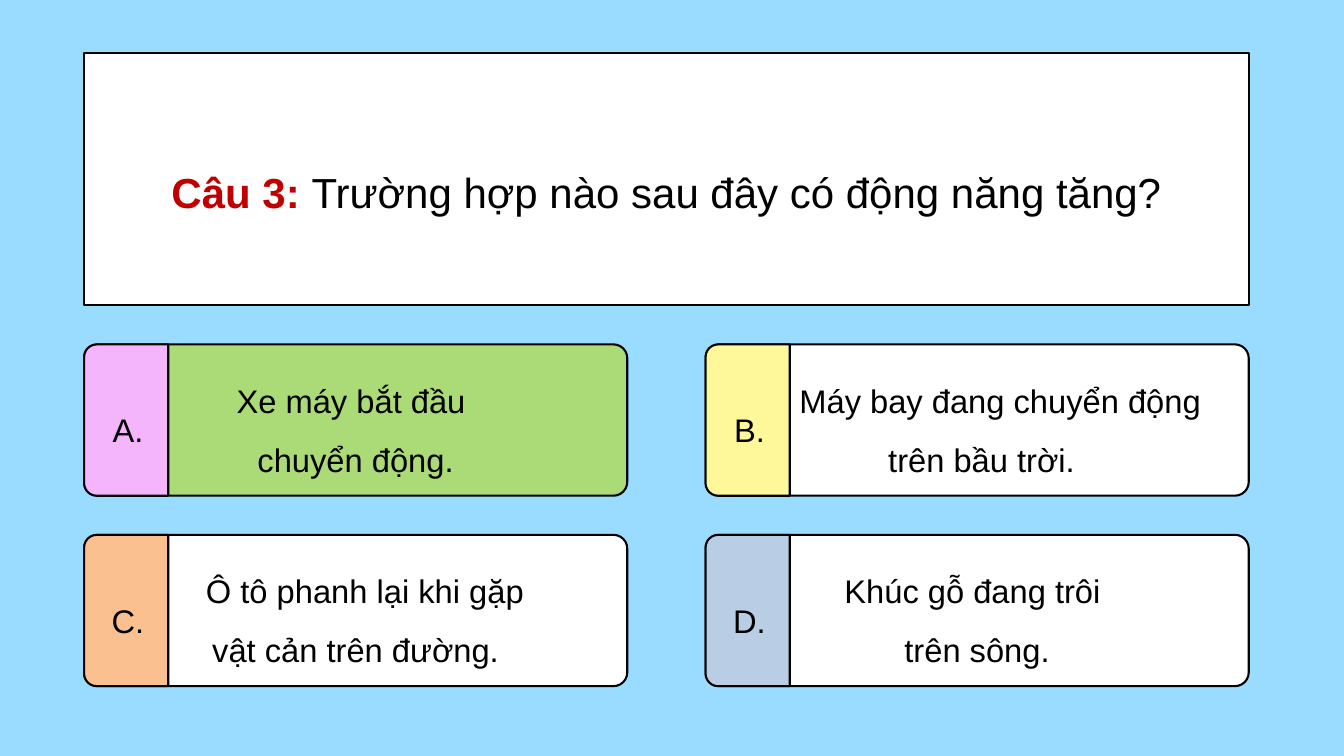
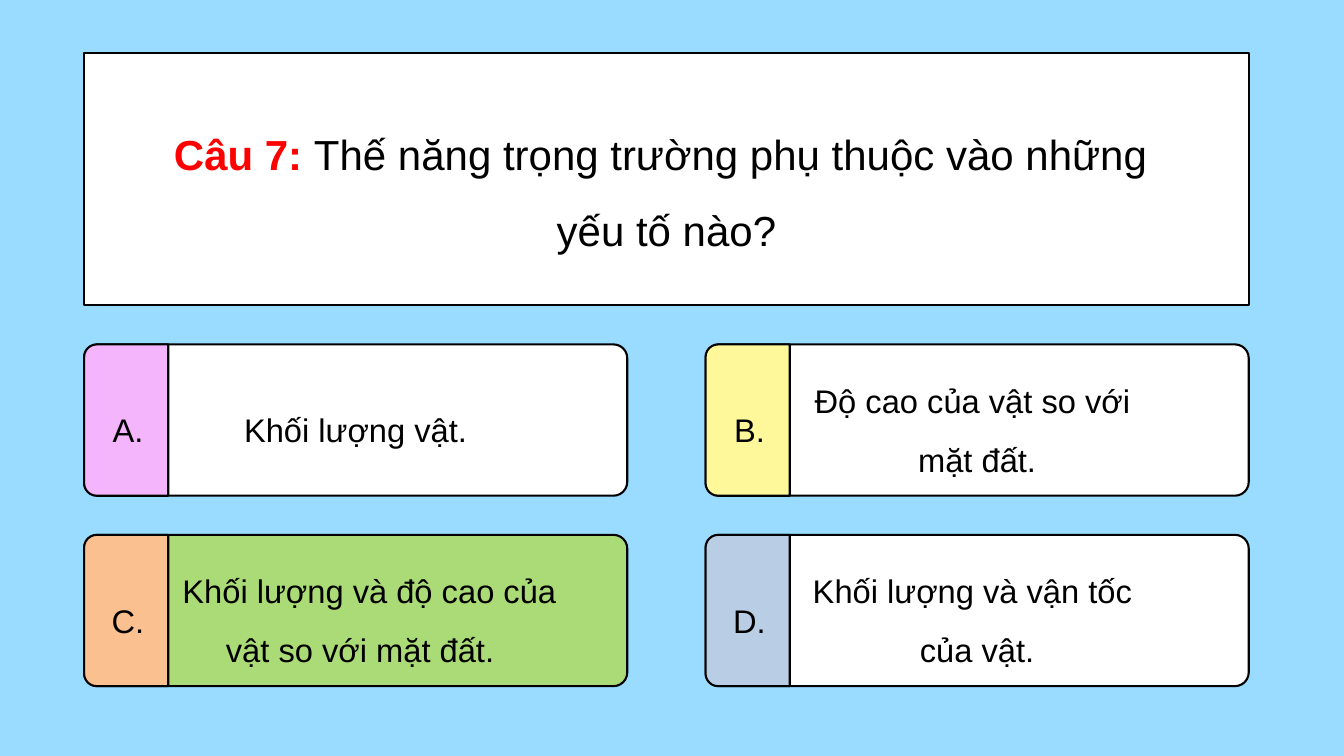
from pptx import Presentation
from pptx.dml.color import RGBColor
from pptx.enum.shapes import MSO_SHAPE
from pptx.enum.text import MSO_ANCHOR, MSO_AUTO_SIZE, PP_ALIGN
from pptx.oxml import parse_xml
from pptx.oxml.ns import nsdecls
from pptx.util import Cm, Pt

SKY = RGBColor(0x99, 0xDC, 0xFF)
WHITE = RGBColor(0xFF, 0xFF, 0xFF)
BLACK = RGBColor(0x00, 0x00, 0x00)
GREEN = RGBColor(0xAB, 0xDB, 0x77)
DARK_RED = RGBColor(0xC0, 0x00, 0x00)
RED = RGBColor(0xFF, 0x00, 0x00)
PINK = RGBColor(0xF5, 0xB5, 0xFC)
YELLOW = RGBColor(0xFF, 0xF8, 0x9B)
ORANGE = RGBColor(0xFA, 0xC0, 0x90)
BLUE = RGBColor(0xB9, 0xCD, 0xE5)

ROUNDED = MSO_SHAPE.ROUNDED_RECTANGLE
ROUNDED_TOP = MSO_SHAPE.ROUND_2_SAME_RECTANGLE
CENTER = PP_ALIGN.CENTER
MIDDLE = MSO_ANCHOR.MIDDLE
NO_AUTOFIT = MSO_AUTO_SIZE.NONE

TITLE_ONLY_LAYOUT = 5
LETTERS = "ABCD"
TAB_COLORS = (PINK, YELLOW, ORANGE, BLUE)

# Answer grid, in centimetres
LEFT, TOP = 3.18, 13.02
COLUMN_STEP, ROW_STEP = 23.49, 7.2
ANSWER_WIDTH, ANSWER_HEIGHT, TAB_WIDTH = 20.53, 5.72, 3.18

# Each answer line is a text, or a text with its left indent in centimetres
QUESTIONS = [
    {
        "label": "Câu 3: ",
        "label_color": DARK_RED,
        "lines": ["Trường hợp nào sau đây có động năng tăng?"],
        "answers": [
            ["Xe máy bắt đầu ", "chuyển động."],
            [("Máy bay đang chuyển động", 1.75), " trên bầu trời."],
            [("Ô tô phanh lại khi gặp ", 1.05), "vật cản trên đường."],
            ["Khúc gỗ đang trôi ", "trên sông."],
        ],
        "correct": "A",
    },
    {
        "label": "Câu 7: ",
        "label_color": RED,
        "lines": ["Thế năng trọng trường phụ thuộc vào những ", "yếu tố nào?"],
        "answers": [
            ["Khối lượng vật."],
            ["Độ cao của vật so với ", "mặt đất."],
            [("Khối lượng và độ cao của", 1.05), " vật so với mặt đất."],
            ["Khối lượng và vận tốc ", "của vật."],
        ],
        "correct": "C",
    },
]


class QuizDeck:
    font = "Arial"
    question_size = Pt(45)
    answer_size = Pt(35)
    outline = Pt(2.25)
    corner = 0.091
    tab_corner = 0.149

    def __init__(self):
        self.presentation = Presentation()
        self.presentation.slide_width = Cm(50.8)
        self.presentation.slide_height = Cm(28.58)
        background = self.presentation.slide_master.background.fill
        background.solid()
        background.fore_color.rgb = SKY
        self.slide = None

    def new_slide(self):
        layout = self.presentation.slide_layouts[TITLE_ONLY_LAYOUT]
        self.slide = self.presentation.slides.add_slide(layout)

    def paint(self, shape, color):
        shape.fill.solid()
        shape.fill.fore_color.rgb = color
        shape.line.color.rgb = BLACK
        shape.line.width = self.outline

    def add_text(self, shape, paragraphs, size):
        """Fill the shape with paragraphs of (runs, indent); a run is (text, color, bold)."""
        frame = shape.text_frame
        frame.word_wrap = True
        frame.auto_size = NO_AUTOFIT
        frame.vertical_anchor = MIDDLE
        for index, (runs, indent) in enumerate(paragraphs):
            paragraph = frame.add_paragraph() if index else frame.paragraphs[0]
            paragraph.alignment = CENTER
            paragraph.line_spacing = 1.5
            paragraph.space_before = Pt(0)
            if indent:
                paragraph._p.get_or_add_pPr().set("marL", str(Cm(indent)))
            for text, color, bold in runs:
                run = paragraph.add_run()
                run.text = text
                run.font.name = self.font
                run.font.size = size
                run.font.bold = bold
                run.font.color.rgb = color

    def question(self, label, label_color, lines):
        title = self.slide.shapes.title
        title.left, title.top = Cm(LEFT), Cm(2)
        title.width, title.height = Cm(COLUMN_STEP + ANSWER_WIDTH), Cm(9.53)
        # Round the placeholder's corners
        title._element.spPr.append(parse_xml(
            f'<a:prstGeom {nsdecls("a")} prst="roundRect"><a:avLst>'
            f'<a:gd name="adj" fmla="val {round(self.corner * 100000)}"/>'
            '</a:avLst></a:prstGeom>'))
        self.paint(title, WHITE)
        paragraphs = [([(line, BLACK, False)], 0) for line in lines]
        paragraphs[0][0].insert(0, (label, label_color, True))
        self.add_text(title, paragraphs, self.question_size)

    def answer(self, position, lines, is_correct):
        row, column = divmod(position, 2)
        left = LEFT + column * COLUMN_STEP
        top = TOP + row * ROW_STEP
        group = self.slide.shapes.add_group_shape()

        # Answer box
        box = group.shapes.add_shape(
            ROUNDED, Cm(left), Cm(top), Cm(ANSWER_WIDTH), Cm(ANSWER_HEIGHT))
        box.adjustments[0] = self.corner
        box.shadow.inherit = False
        self.paint(box, GREEN if is_correct else WHITE)
        pairs = [(line, 0) if isinstance(line, str) else line for line in lines]
        self.add_text(box, [([(text, BLACK, False)], indent) for text, indent in pairs],
                      self.answer_size)

        # Letter tab, turned so that its rounded side faces left
        turn_offset = (ANSWER_HEIGHT - TAB_WIDTH) / 2
        tab = group.shapes.add_shape(
            ROUNDED_TOP, Cm(left - turn_offset), Cm(top + turn_offset),
            Cm(ANSWER_HEIGHT), Cm(TAB_WIDTH))
        tab.rotation = 270
        tab.adjustments[0] = self.tab_corner
        tab.shadow.inherit = False
        self.paint(tab, TAB_COLORS[position])
        self.add_text(tab, [([(f"{LETTERS[position]}.", BLACK, False)], 0)], self.answer_size)
        tab.text_frame._txBody.bodyPr.set("vert", "vert")


def main():
    deck = QuizDeck()
    for item in QUESTIONS:
        deck.new_slide()
        deck.question(item["label"], item["label_color"], item["lines"])
        for position, lines in enumerate(item["answers"]):
            deck.answer(position, lines, LETTERS[position] == item["correct"])
    deck.presentation.save("out.pptx")


if __name__ == "__main__":
    main()
